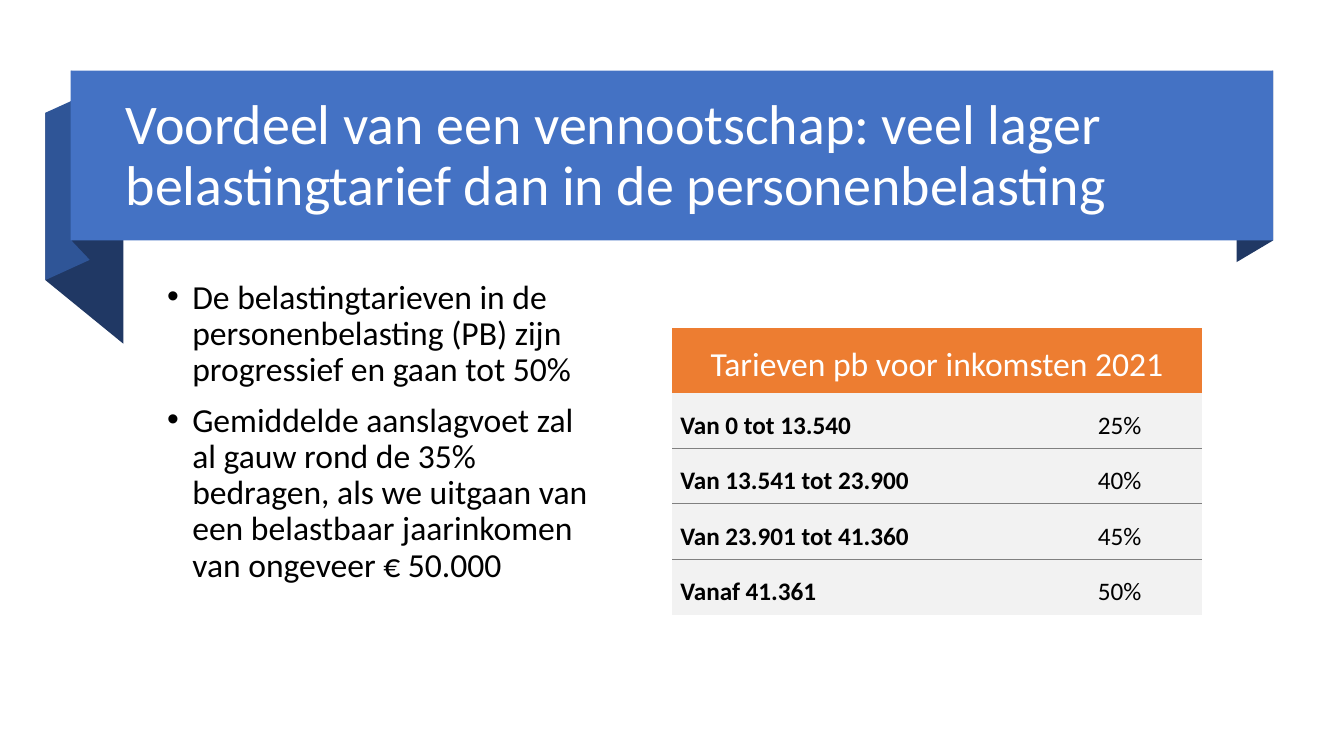
from collections import namedtuple
from dataclasses import dataclass

from lxml import etree
from pptx import Presentation
from pptx import util as u
from pptx.dml import color
from pptx.enum import shapes, text
from pptx.oxml import ns

Box = namedtuple("Box", "left top width height")


@dataclass(frozen=True)
class Theme:
    font: str = "Calibri"
    ribbon: str = "4472C4"
    ribbon_side: str = "2F5597"
    ribbon_dark: str = "203864"
    header: str = "ED7D31"
    row: str = "F2F2F2"
    rule: str = "808080"
    light: str = "FFFFFF"
    dark: str = "000000"
    title_size: int = 40
    body_size: int = 24
    cell_size: int = 18


THEME = Theme()
NO_GRID_STYLE = "{2D5ABB26-0587-4C30-8999-92F81FD0307C}"

TITLE = "Voordeel van een vennootschap: veel lager belastingtarief dan in de personenbelasting"
BULLETS = [
    "De belastingtarieven in de personenbelasting (PB) zijn progressief en gaan tot 50%",
    "Gemiddelde aanslagvoet zal al gauw rond de 35% bedragen, als we uitgaan van "
    "een belastbaar jaarinkomen van ongeveer € 50.000",
]
TABLE_TITLE = "Tarieven pb voor inkomsten 2021"
RATES = [
    ("Van 0 tot 13.540", "25%"),
    ("Van 13.541 tot 23.900", "40%"),
    ("Van 23.901 tot 41.360", "45%"),
    ("Vanaf 41.361", "50%"),
]


def in_points(box):
    return [u.Pt(length) for length in box]


def style_paragraph(para, size, ink, bold=False):
    for span in para.runs:
        span.font.name = THEME.font
        span.font.size = u.Pt(size)
        span.font.bold = bold
        span.font.color.rgb = color.RGBColor.from_string(ink)


def paint(shape, fill):
    shape.shadow.inherit = False
    shape.fill.solid()
    shape.fill.fore_color.rgb = color.RGBColor.from_string(fill)
    shape.line.fill.background()


def add_text_frame(page, box):
    frame = page.shapes.add_textbox(*in_points(box)).text_frame
    frame.word_wrap = True
    return frame


def add_fold(page, points, fill):
    (x, y), *rest = points
    builder = page.shapes.build_freeform(u.Pt(x), u.Pt(y), scale=1.0)
    builder.add_line_segments([(u.Pt(a), u.Pt(b)) for a, b in rest], close=True)
    paint(builder.convert_to_shape(), fill)


def add_ribbon(page, box):
    left, top = box.left, box.top
    right, bottom = left + box.width, top + box.height
    outer, inner, tail = left - 18, left + 13.7, left + 37.7

    # Folded ends, each a slanted strip: near x, near top, far x, far top, height
    folds = [
        (right, top, right - 26, top + 15.4, box.height, THEME.ribbon_dark),
        (tail, top + 75.6, outer, top + 30.2, 119.5, THEME.ribbon_dark),
        (inner, top + 15.8, outer, top + 30.2, 119.5, THEME.ribbon_side),
        (inner, top + 13.7, left + 0.7, top, box.height, THEME.ribbon_dark),
    ]
    for near, near_top, far, far_top, height, fill in folds:
        points = [(near, near_top + height), (far, far_top + height),
                  (far, far_top), (near, near_top)]
        add_fold(page, points, fill)

    # Front band
    band = page.shapes.add_shape(shapes.MSO_SHAPE.RECTANGLE, *in_points(box))
    paint(band, THEME.ribbon)

    # Title
    frame = add_text_frame(page, Box(left + 32.4, top + 9.4, box.width - 47.5, 104.4))
    frame.vertical_anchor = text.MSO_ANCHOR.MIDDLE
    para = frame.paragraphs[0]
    para.text = TITLE
    para.line_spacing = 0.9
    style_paragraph(para, THEME.title_size, THEME.light)


def add_bullets(page, box):
    frame = add_text_frame(page, box)
    frame.text = "\n".join(BULLETS)
    for para in frame.paragraphs:
        para.line_spacing = 0.9
        para.space_before = u.Pt(10)
        style_paragraph(para, THEME.body_size, THEME.dark)
        props = para._p.get_or_add_pPr()
        props.set("marL", str(u.Pt(18)))
        props.set("indent", str(u.Pt(-18)))
        etree.SubElement(props, ns.qn("a:buFont"), typeface="Arial")
        etree.SubElement(props, ns.qn("a:buChar"), char="•")


def fill_cell(cell, words, fill, size, ink, bold=False, centred=False):
    cell.text = words
    cell.vertical_anchor = text.MSO_ANCHOR.MIDDLE
    cell.margin_left = cell.margin_right = u.Pt(5.8)
    cell.margin_top, cell.margin_bottom = u.Pt(10.8), u.Pt(3.6)
    cell.fill.solid()
    cell.fill.fore_color.rgb = color.RGBColor.from_string(fill)
    para = cell.text_frame.paragraphs[0]
    para.alignment = text.PP_ALIGN.CENTER if centred else text.PP_ALIGN.LEFT
    style_paragraph(para, size, ink, bold)


def rule_below(cell):
    line = etree.Element(ns.qn("a:lnB"), w=str(u.Pt(0.75)))
    fill = etree.SubElement(line, ns.qn("a:solidFill"))
    etree.SubElement(fill, ns.qn("a:srgbClr"), val=THEME.rule)
    cell._tc.get_or_add_tcPr().insert(0, line)


def add_rate_table(page, box):
    table = page.shapes.add_table(len(RATES) + 1, 2, *in_points(box)).table
    table.horz_banding = False
    table._tbl.tblPr.find(ns.qn("a:tableStyleId")).text = NO_GRID_STYLE

    # Column widths and row heights
    rate_width, header_height = 117.4, 46.8
    table.columns[0].width = u.Pt(box.width - rate_width)
    table.columns[1].width = u.Pt(rate_width)
    for row in table.rows:
        row.height = u.Pt((box.height - header_height) / len(RATES))
    table.rows[0].height = u.Pt(header_height)

    # Header across both columns
    header = table.cell(0, 0)
    header.merge(table.cell(0, 1))
    fill_cell(header, TABLE_TITLE, THEME.header, THEME.body_size, THEME.light, centred=True)

    # Income brackets and rates
    for index, bracket in enumerate(RATES, start=1):
        for column, words in enumerate(bracket):
            cell = table.cell(index, column)
            fill_cell(cell, words, THEME.row, THEME.cell_size, THEME.dark,
                      bold=column == 0, centred=column == 1)
            if index < len(RATES):
                rule_below(cell)


def main():
    deck = Presentation()
    deck.slide_width, deck.slide_height = u.Pt(960), u.Pt(540)
    page = deck.slides.add_slide(deck.slide_layouts[6])
    add_ribbon(page, Box(50.4, 50.4, 859, 121.4))
    add_bullets(page, Box(112.3, 196.6, 319, 280.8))
    add_rate_table(page, Box(480.2, 234, 378.2, 205.2))
    deck.save("out.pptx")


if __name__ == "__main__":
    main()
